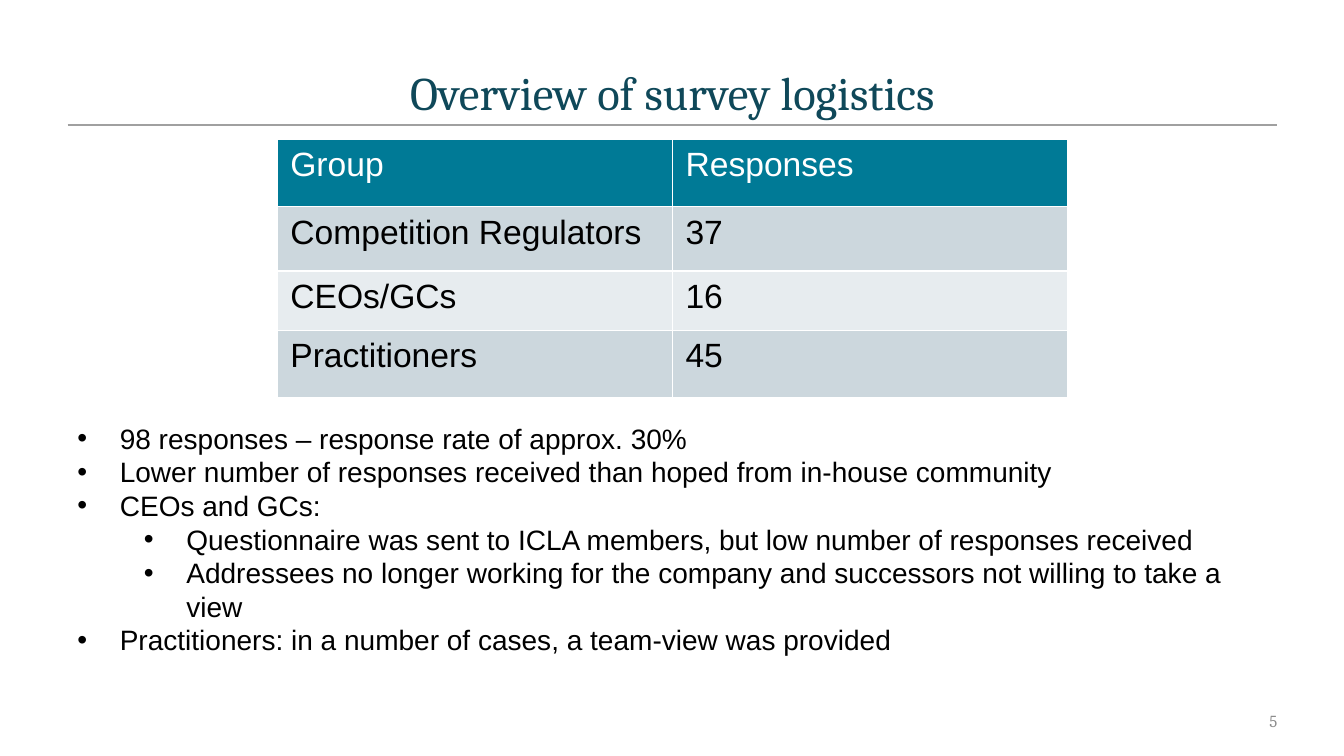
import pptx
import pptx.util
import pptx.dml.color
import pptx.enum.text
import pptx.enum.shapes
import lxml.etree

Inches = pptx.util.Inches
Pt = pptx.util.Pt
ALIGN = pptx.enum.text.PP_ALIGN
ANCHOR = pptx.enum.text.MSO_ANCHOR
FIT = pptx.enum.text.MSO_AUTO_SIZE
NS = "{http://schemas.openxmlformats.org/drawingml/2006/main}"

HUES = {
    "title": "0F4859", "rule": "A0A0A0", "page": "8C8C8C",
    "head": "007A96", "dark": "CCD7DD", "light": "E7ECEF",
    "white": "FFFFFF", "black": "000000",
}


def color(name):
    return pptx.dml.color.RGBColor.from_string(HUES[name])


def style(para, size, face, hue):
    looks = {"size": Pt(size), "name": face, "bold": False}
    for key, value in looks.items():
        setattr(para.font, key, value)
    para.font.color.rgb = color(hue)


deck = pptx.Presentation()
deck.slide_width = Inches(13.33)
deck.slide_height = Inches(7.5)
slide = deck.slides.add_slide(deck.slide_layouts[5])

rule = slide.shapes.add_connector(
    pptx.enum.shapes.MSO_CONNECTOR.STRAIGHT,
    Inches(0.67), Inches(1.24), Inches(12.67), Inches(1.24))
rule.line.color.rgb = color("rule")
rule.line.width = Pt(1)
lxml.etree.SubElement(rule._element.spPr, NS + "effectLst")

title = slide.shapes.title
place = {"left": 0.67, "top": 0.58, "width": 12, "height": 0.67}
for key, value in place.items():
    setattr(title, key, Inches(value))
frame = title.text_frame
frame.text = "Overview of survey logistics"
frame.auto_size = FIT.NONE
frame.vertical_anchor = ANCHOR.MIDDLE
frame.paragraphs[0].alignment = ALIGN.CENTER
style(frame.paragraphs[0], 33.3, "Cambria", "title")

page = slide.shapes.add_textbox(
    Inches(9.67), Inches(6.95), Inches(3), Inches(0.4)).text_frame
page.text = "5"
page.word_wrap = True
page.margin_right = 0
page.vertical_anchor = ANCHOR.MIDDLE
page.paragraphs[0].alignment = ALIGN.RIGHT
style(page.paragraphs[0], 12, "Cambria", "page")

rows = [
    ("Group", "Responses", 0.67, "head", "white"),
    ("Competition Regulators", "37", 0.64, "dark", "black"),
    ("CEOs/GCs", "16", 0.59, "light", "black"),
    ("Practitioners", "45", 0.67, "dark", "black"),
]
table = slide.shapes.add_table(
    len(rows), 2, Inches(2.75), Inches(1.38), Inches(7.84), Inches(2.57)).table
pads = {"margin_left": 0.13, "margin_right": 0.13,
        "margin_top": 0.07, "margin_bottom": 0.07}
for i, (group, count, height, fill, ink) in enumerate(rows):
    table.rows[i].height = Inches(height)
    for j, text in enumerate((group, count)):
        cell = table.cell(i, j)
        cell.text = text
        cell.fill.solid()
        cell.fill.fore_color.rgb = color(fill)
        for key, value in pads.items():
            setattr(cell, key, Inches(value))
        style(cell.text_frame.paragraphs[0], 24, "Arial", ink)

notes = [
    (0, "98 responses – response rate of approx. 30%"),
    (0, "Lower number of responses received than hoped from in-house community"),
    (0, "CEOs and GCs:"),
    (1, "Questionnaire was sent to ICLA members, but low number of responses received"),
    (1, "Addressees no longer working for the company and successors not willing to take a view"),
    (0, "Practitioners: in a number of cases, a team-view was provided"),
]
body = slide.shapes.add_textbox(
    Inches(0.67), Inches(4.13), Inches(12.07), Inches(2.46)).text_frame
body.word_wrap = True
body.auto_size = FIT.SHAPE_TO_FIT_TEXT
for i, (level, text) in enumerate(notes):
    para = body.paragraphs[0] if i == 0 else body.add_paragraph()
    para.text = text
    para.level = level
    para.line_spacing = Pt(24)
    props = para._p.get_or_add_pPr()
    props.set("marL", str(Inches((0.42, 1.08)[level])))
    props.set("indent", str(Inches(-0.42)))
    lxml.etree.SubElement(props, NS + "buFont", typeface="Arial")
    lxml.etree.SubElement(props, NS + "buChar", char="•")
    style(para, 20, "Arial", "black")

deck.save("out.pptx")
